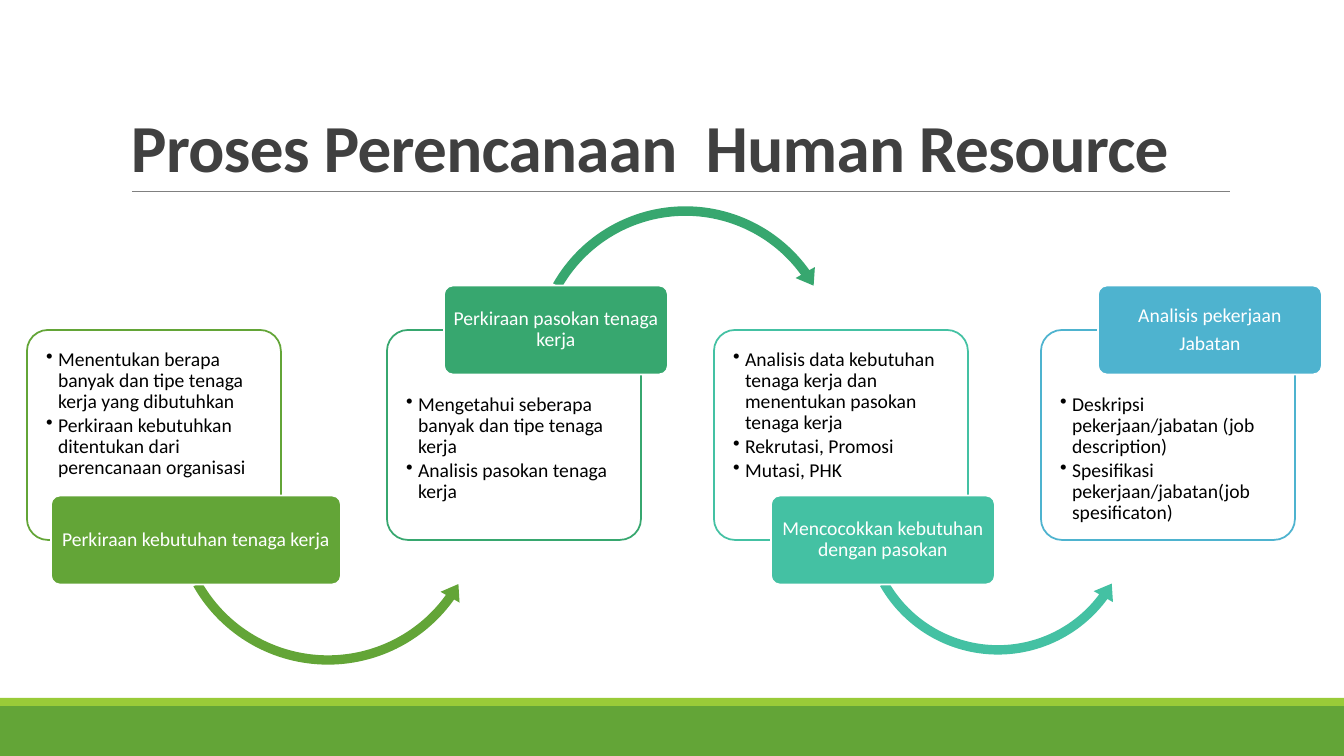
import pptx
import pptx.util
import pptx.dml.color
import pptx.enum.shapes
import pptx.enum.text
import pptx.oxml.ns
import lxml.etree

COLORS = {
    "green": "63A537", "lime": "99CB38", "emerald": "37A76F", "teal": "44C1A3",
    "sky": "4EB3CF", "white": "FFFFFF", "black": "000000", "title": "404040", "rule": "808080",
}
FONT = "Calibri"
TITLE = "Proses Perencanaan  Human Resource"
STEPS = [
    {"x": 27, "color": "green", "label_w": 290, "label_low": True,
     "label": ["Perkiraan kebutuhan tenaga kerja"],
     "points": ["Menentukan berapa banyak dan tipe tenaga kerja yang dibutuhkan",
                "Perkiraan kebutuhkan ditentukan dari perencanaan organisasi"],
     "arrow": (167, 349, 322, [0.029, 3.574, 21.329, 90.245, 0.034])},
    {"x": 387, "color": "emerald", "label_w": 224, "label_low": False,
     "label": ["Perkiraan pasokan tenaga kerja"],
     "points": ["Mengetahui seberapa banyak dan tipe tenaga kerja",
                "Analisis pasokan tenaga kerja"],
     "arrow": (527, 200, 317, [0.03, 3.637, 194.608, 125.755, 0.035])},
    {"x": 714, "color": "teal", "label_w": 224, "label_low": True,
     "label": ["Mencocokkan kebutuhan dengan pasokan"],
     "points": ["Analisis data kebutuhan tenaga kerja dan menentukan pasokan tenaga kerja",
                "Rekrutasi, Promosi", "Mutasi, PHK"],
     "arrow": (856, 377, 284, [0.033, 4.084, 21.839, 90.245, 0.039])},
    {"x": 1041, "color": "sky", "label_w": 224, "label_low": False,
     "label": ["Analisis pekerjaan", "Jabatan"],
     "points": ["Deskripsi pekerjaan/jabatan (job description)",
                "Spesifikasi pekerjaan/jabatan(job spesificaton)"],
     "arrow": None},
]
CARD_Y, CARD_W, CARD_H = 330, 254, 210
LABEL_H, LABEL_CENTER = 89, 169
PAD, INDENT = 13, 12

SHAPE = pptx.enum.shapes.MSO_SHAPE
ANCHOR = pptx.enum.text.MSO_ANCHOR
ALIGN = pptx.enum.text.PP_ALIGN
Pt = pptx.util.Pt
qn = pptx.oxml.ns.qn


def px(n):
    return pptx.util.Emu(round(n * 914400 / 100.8))


def rgb(name):
    return pptx.dml.color.RGBColor.from_string(COLORS[name])


def add_shape(s, kind, box, fill, line=None, adjustments=()):
    sp = s.shapes.add_shape(kind, *map(px, box))
    sp.shadow.inherit = False
    sp.fill.solid()
    sp.fill.fore_color.rgb = rgb(fill)
    if line:
        sp.line.color.rgb = rgb(line)
        sp.line.width = Pt(1.25)
    else:
        sp.line.fill.background()
    for i, value in enumerate(adjustments):
        sp.adjustments[i] = value
    return sp


def write(sp, lines, size, color, anchor, align, insets, spacing, after=0, bold=False):
    tf = sp.text_frame
    tf.word_wrap = True
    tf.vertical_anchor = anchor
    tf.margin_left, tf.margin_top, tf.margin_right, tf.margin_bottom = map(px, insets)
    tf.text = "\n".join(lines)
    for p in tf.paragraphs:
        p.alignment = align
        p.line_spacing = spacing
        p.space_after = Pt(after)
        for r in p.runs:
            r.font.name = FONT
            r.font.size = Pt(size)
            r.font.bold = bold
            r.font.color.rgb = rgb(color)
    return tf


def add_bullets(tf):
    for p in tf.paragraphs:
        pPr = p._p.get_or_add_pPr()
        pPr.set("marL", str(px(INDENT)))
        pPr.set("indent", str(px(-INDENT)))
        lxml.etree.SubElement(pPr, qn("a:buChar")).set("char", "•")


def add_card(s, step):
    card = add_shape(s, SHAPE.ROUNDED_RECTANGLE, (step["x"], CARD_Y, CARD_W, CARD_H),
                     "white", step["color"], [0.1])
    color = card.fill._xPr.find(qn("a:solidFill"))[0]
    lxml.etree.SubElement(color, qn("a:alpha")).set("val", "90000")
    top = PAD if step["label_low"] else PAD + LABEL_H // 2 + 1
    tf = write(card, step["points"], 14, "black", ANCHOR.TOP, ALIGN.LEFT,
               (PAD, top, PAD, 0), 0.9, 2.1)
    add_bullets(tf)


def add_arrow(s, step):
    x, y, size, adjustments = step["arrow"]
    kind = SHAPE.LEFT_CIRCULAR_ARROW if step["label_low"] else SHAPE.CIRCULAR_ARROW
    add_shape(s, kind, (x, y, size, size), step["color"], adjustments=adjustments)


def add_label(s, step):
    edge = CARD_Y + CARD_H if step["label_low"] else CARD_Y
    box = (step["x"] + LABEL_CENTER - step["label_w"] / 2, edge - LABEL_H / 2,
           step["label_w"], LABEL_H)
    label = add_shape(s, SHAPE.ROUNDED_RECTANGLE, box, step["color"], "white", [0.1])
    write(label, step["label"], 14, "white", ANCHOR.MIDDLE, ALIGN.CENTER,
          (3, 2, 3, 2), 0.9, 4.9)


def main():
    prs = pptx.Presentation()
    prs.slide_width, prs.slide_height = px(1344), px(756)
    s = prs.slides.add_slide(prs.slide_layouts[6])

    add_shape(s, SHAPE.RECTANGLE, (0, 706, 1344, 50), "green")
    add_shape(s, SHAPE.RECTANGLE, (0, 698, 1344, 8), "lime")
    rule = s.shapes.add_connector(pptx.enum.shapes.MSO_CONNECTOR.STRAIGHT,
                                  px(132), px(191), px(1230), px(191))
    rule.line.color.rgb = rgb("rule")
    rule.line.width = Pt(0.5)
    lxml.etree.SubElement(rule._element.spPr, qn("a:effectLst"))

    title = s.shapes.add_textbox(px(121), px(31), px(1109), px(160))
    tf = write(title, [TITLE], 48, "title", ANCHOR.BOTTOM, ALIGN.LEFT,
               (10, 5, 10, 5), 0.85, bold=True)
    tf.paragraphs[0].runs[0].font._element.set("spc", "-50")

    for step in STEPS:
        add_card(s, step)
        if step["arrow"]:
            add_arrow(s, step)
        add_label(s, step)

    prs.save("out.pptx")


if __name__ == "__main__":
    main()
